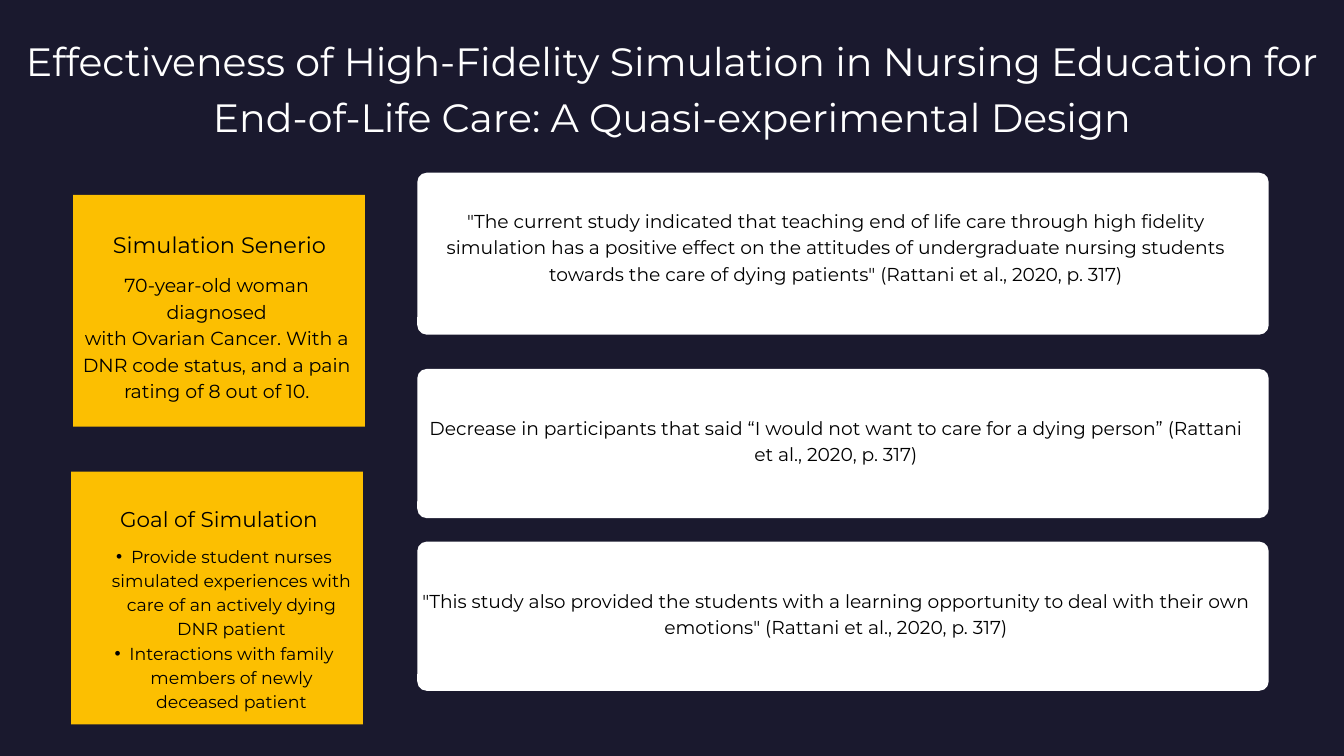
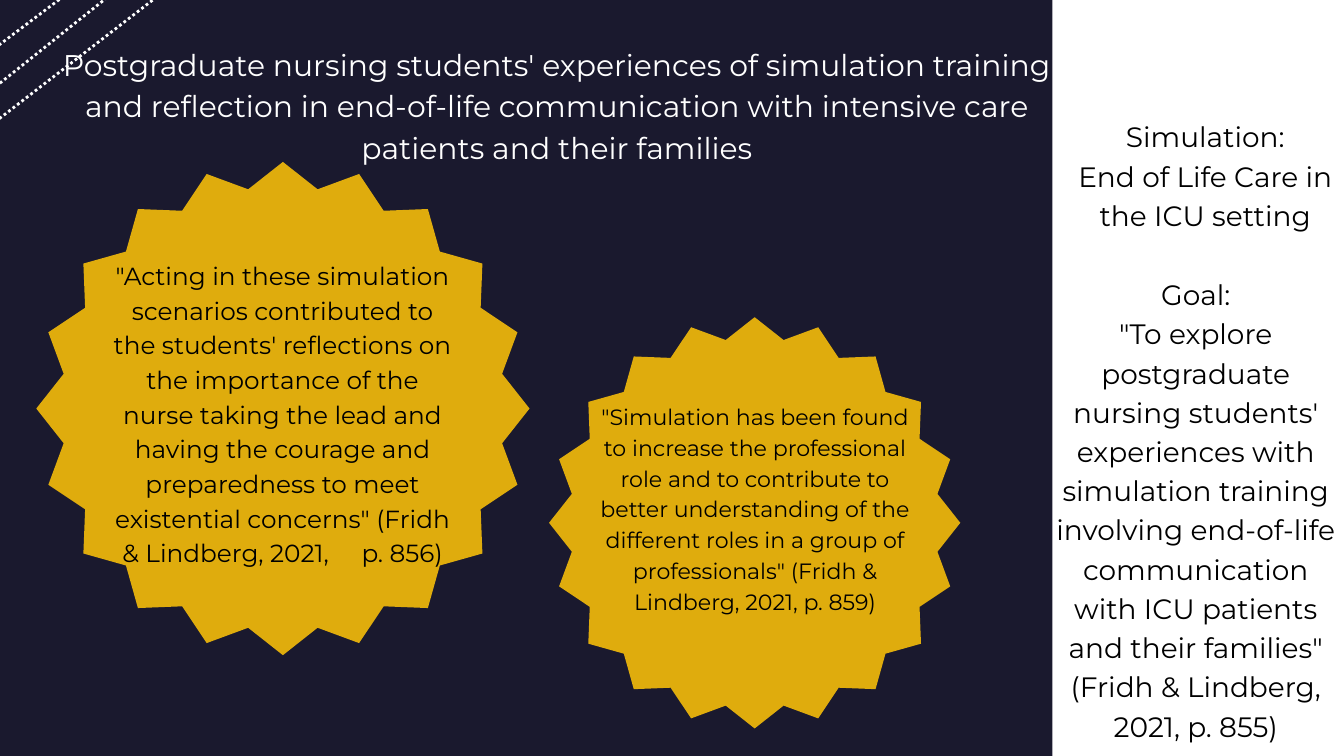
from dataclasses import dataclass
from math import cos, pi, sin
from typing import NamedTuple

from lxml.etree import SubElement
from pptx import Presentation
from pptx.dml.color import RGBColor
from pptx.enum.dml import MSO_LINE
from pptx.enum.shapes import MSO_CONNECTOR, MSO_SHAPE
from pptx.enum.text import MSO_ANCHOR as Anchor, PP_ALIGN as Align
from pptx.oxml.ns import qn
from pptx.util import Inches, Pt

# The slide is a grid of square cells, 20 columns by 11.25 rows.
COLS, ROWS = 20, 11.25
CELL = Inches(1)

NAVY, WHITE, BLACK = "1A192E", "FFFFFF", "000000"
AMBER, GOLD = "FCBF01", "DFAC0D"
FONT = "Montserrat"
LEAD = 1.4  # line pitch as a share of the text size


class Box(NamedTuple):
    col: float
    row: float
    wide: float
    high: float


class Run(NamedTuple):
    text: str
    gap: float = 0  # extra letter spacing in points


@dataclass
class Text:
    box: Box
    size: float
    paras: list[list[Run]]
    color: str = BLACK
    inset: float = 0
    anchor: Anchor = Anchor.TOP
    hang: float = 0  # bullet indent; none when zero


@dataclass
class Card:
    row: float
    high: float
    text_high: float
    quote: str


@dataclass
class Burst:
    col: float
    row: float
    radius: float


class Ray(NamedTuple):
    x1: float
    y1: float
    x2: float
    y2: float


def rgb(code: str) -> RGBColor:
    return RGBColor.from_string(code)


def cells(count: float) -> int:
    return round(count * CELL)


def plain(*texts: str) -> list[list[Run]]:
    """Make one paragraph of a single run from each text."""
    return [[Run(text)] for text in texts]


def paint(shape, color: str) -> None:
    shape.shadow.inherit = False
    shape.fill.solid()
    shape.fill.fore_color.rgb = rgb(color)
    shape.line.fill.background()


def add_panel(slide, box: Box, color: str, radius: float = 0) -> None:
    kind = MSO_SHAPE.ROUNDED_RECTANGLE if radius else MSO_SHAPE.RECTANGLE
    shape = slide.shapes.add_shape(kind, *map(cells, box))
    if radius:
        shape.adjustments[0] = radius / box.high
    paint(shape, color)


def add_bullet(para, hang: float) -> None:
    props = para._p.get_or_add_pPr()
    props.set("marL", str(cells(2 * hang)))
    props.set("indent", str(-cells(hang)))
    SubElement(props, qn("a:buFont")).set("typeface", "Arial")
    SubElement(props, qn("a:buChar")).set("char", "•")


def add_text(slide, item: Text) -> None:
    frame = slide.shapes.add_textbox(*map(cells, item.box)).text_frame
    frame.word_wrap = True
    frame.vertical_anchor = item.anchor
    frame.margin_left = frame.margin_right = cells(item.inset)
    frame.margin_top = frame.margin_bottom = cells(item.inset)
    for i, runs in enumerate(item.paras):
        para = frame.add_paragraph() if i else frame.paragraphs[0]
        para.alignment = Align.CENTER
        para.line_spacing = Pt(round(item.size * LEAD, 1))
        if item.hang:
            add_bullet(para, item.hang)
        for part in runs:
            run = para.add_run()
            run.text = part.text
            run.font.name = FONT
            run.font.size = Pt(item.size)
            run.font.color.rgb = rgb(item.color)
            if part.gap:
                run.font._element.set("spc", str(round(part.gap * 100)))


def add_card(slide, card: Card) -> None:
    col, wide = 6.21, 12.67
    add_panel(slide, Box(col, card.row, wide, card.high), WHITE, radius=0.14)
    box = Box(col, card.row - 0.12, wide - 0.21, card.text_high)
    add_text(slide, Text(box, 20, plain(card.quote), inset=0.06,
                         anchor=Anchor.MIDDLE))


def add_burst(slide, burst: Burst, tips: int = 20, depth: float = 0.9) -> None:
    """Draw a star whose points alternate between two radii."""
    points = []
    for i in range(2 * tips):
        reach = burst.radius * (depth if i % 2 else 1)
        turn = pi * i / tips
        points.append((cells(burst.col + reach * sin(turn)),
                       cells(burst.row - reach * cos(turn))))
    pen = slide.shapes.build_freeform(*points[0])
    pen.add_line_segments(points[1:], close=True)
    paint(pen.convert_to_shape(), GOLD)


def add_ray(slide, ray: Ray) -> None:
    line = slide.shapes.add_connector(MSO_CONNECTOR.STRAIGHT, *map(cells, ray))
    line.line.color.rgb = rgb(WHITE)
    line.line.width = Pt(3)
    line.line.dash_style = MSO_LINE.ROUND_DOT
    SubElement(line._element.spPr, qn("a:effectLst"))


def add_slide(deck, title: Text):
    slide = deck.slides.add_slide(deck.slide_layouts[6])
    slide.background.fill.solid()
    slide.background.fill.fore_color.rgb = rgb(NAVY)
    title.color = WHITE
    return slide, title


def add_study(deck) -> None:
    slide, title = add_slide(deck, Text(Box(0, 0.44, COLS, 1.62), 42.3, plain(
        "Effectiveness of High-Fidelity Simulation in Nursing Education for "
        "End-of-Life Care: A Quasi-experimental Design")))
    for panel in (Box(1.09, 2.9, 4.34, 3.45), Box(1.06, 7.02, 4.34, 3.76)):
        add_panel(slide, panel, AMBER)
    cards = (
        Card(2.57, 2.41, 2.41,
             '"The current study indicated that teaching end of life care '
             "through high fidelity simulation has a positive effect on the "
             "attitudes of undergraduate nursing students towards the care of "
             'dying patients" (Rattani et al., 2020, p. 317)'),
        Card(5.49, 2.22, 2.34,
             "Decrease in participants that said “I would not want to care "
             "for a dying person” (Rattani et al., 2020, p. 317)"),
        Card(8.06, 2.22, 2.34,
             '"This study also provided the students with a learning '
             'opportunity to deal with their own emotions" '
             "(Rattani et al., 2020, p. 317)"),
    )
    for card in cards:
        add_card(slide, card)
    texts = (
        title,
        Text(Box(0.65, 3.37, 5.23, 0.43), 24, plain("Simulation Senerio")),
        Text(Box(1.09, 4.02, 4.27, 1.94), 20.3, plain(
            "70-year-old woman diagnosed",
            "with Ovarian Cancer. With a DNR code status, and a pain rating "
            "of 8 out of 10.")),
        Text(Box(1.77, 7.47, 2.98, 0.43), 23, plain("Goal of Simulation")),
        Text(Box(1.21, 8.07, 4.03, 2.48), 18.6, plain(
            "Provide student nurses simulated experiences with care of an "
            "actively dying DNR patient",
            "Interactions with family members of newly deceased patient"),
            hang=0.22),
    )
    for text in texts:
        add_text(slide, text)


def add_review(deck) -> None:
    slide, title = add_slide(deck, Text(Box(0.92, 0.6, 14.74, 1.82), 32, plain(
        "Postgraduate nursing students' experiences of simulation training "
        "and reflection in end-of-life communication with intensive care "
        "patients and their families")))
    rays = (Ray(-0.98, 2.02, 2.06, -0.41), Ray(-1, 2.53, 2.83, -0.43),
            Ray(-2.35, 2.43, 2.08, -0.91))
    for ray in rays:
        add_ray(slide, ray)
    for burst in (Burst(4.21, 6.08, 3.67), Burst(11.23, 7.78, 3.06)):
        add_burst(slide, burst)
    add_panel(slide, Box(15.66, 0, 4.53, 11.54), WHITE)
    texts = (
        title,
        Text(Box(1.66, 3.81, 5.09, 5.07), 26.5, [[
            Run('"Acting in these simulation scenarios contributed to the '
                "students' reflections on the importance of the nurse taking "
                "the lead and having the courage and preparedness to meet "
                'existential concerns" (Fridh & Lindberg, 2021,'),
            Run(" ", gap=28),
            Run("p. 856)")]]),
        Text(Box(8.91, 5.93, 4.65, 3.65), 23.7, plain(
            '"Simulation has been found to increase the professional role '
            "and to contribute to better understanding of the different "
            'roles in a group of professionals" '
            "(Fridh & Lindberg, 2021, p. 859)")),
        Text(Box(15.81, 1.7, 4.25, 1.69), 30, plain(
            "Simulation:", "End of Life Care in the ICU setting")),
        Text(Box(15.68, 4.05, 4.23, 6.84), 30, plain(
            "Goal:",
            "\"To explore postgraduate nursing students' experiences with "
            "simulation training involving end-of-life communication with "
            'ICU patients and their families" '
            "(Fridh & Lindberg, 2021, p. 855)")),
    )
    for text in texts:
        add_text(slide, text)


def main() -> None:
    deck = Presentation()
    deck.slide_width, deck.slide_height = cells(COLS), cells(ROWS)
    add_study(deck)
    add_review(deck)
    deck.save("out.pptx")


if __name__ == "__main__":
    main()
